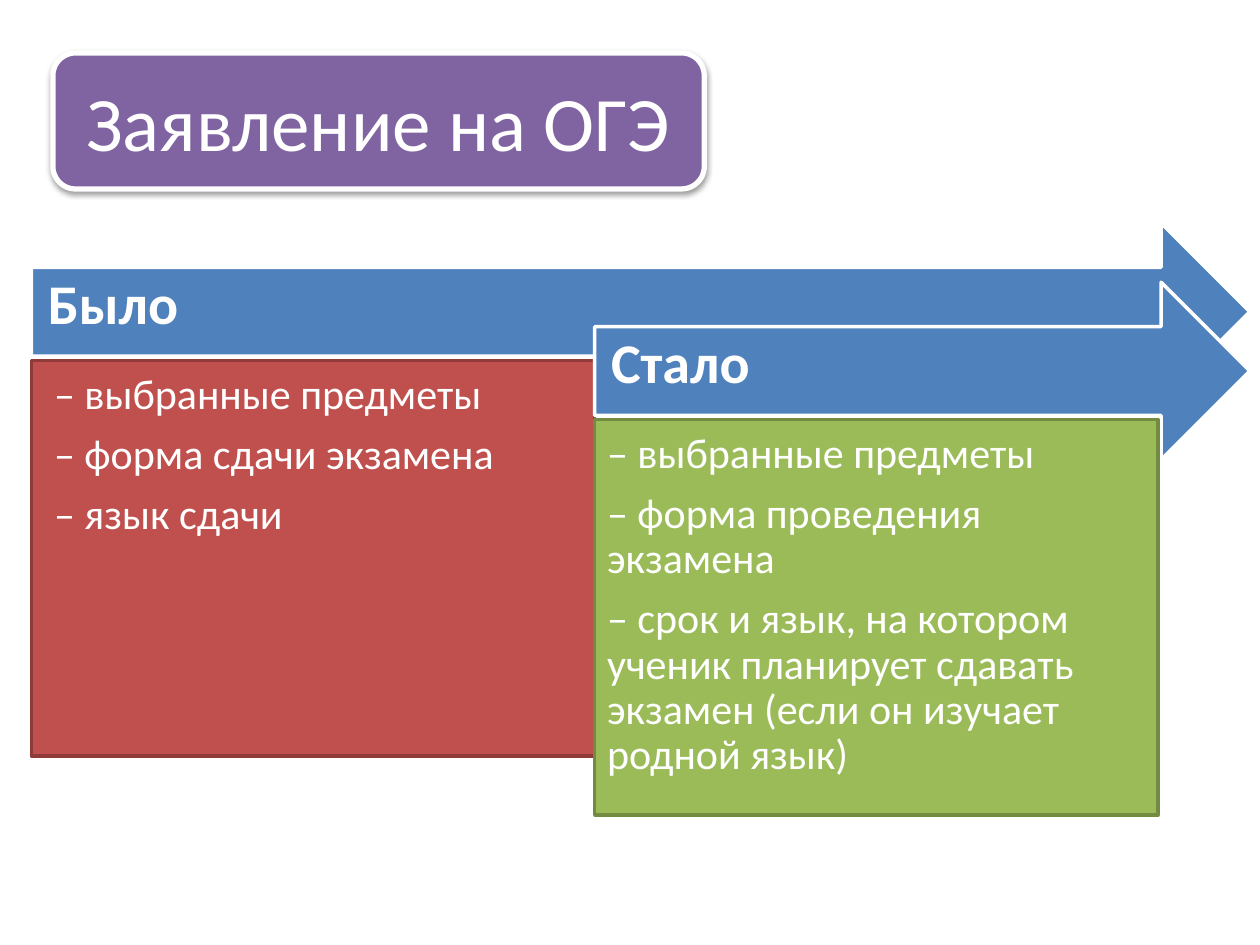
from dataclasses import dataclass

import pptx
import pptx.dml.color
import pptx.enum.shapes
import pptx.enum.text
import pptx.oxml
import pptx.oxml.ns
import pptx.util
from pptx.util import Inches, Pt

Shapes = pptx.enum.shapes.MSO_SHAPE
Anchor = pptx.enum.text.MSO_ANCHOR
Align = pptx.enum.text.PP_ALIGN

FONT = "Calibri"
WHITE = "FFFFFF"
ARROW_FILL = "4F81BD"
TITLE_FILL = "8064A2"
ARROW_RIGHT = 9.92
ARROW_HEIGHT = 1.41
PANEL_WIDTH = 4.47
PANEL_HEIGHT = 3.14
PANEL_DROP = 1.09  # from arrow top to panel top

SHADOW = (
    f'<a:effectLst {pptx.oxml.ns.nsdecls("a")}>'
    '<a:outerShdw blurRad="40000" dist="20000" dir="5400000" rotWithShape="0">'
    '<a:srgbClr val="000000"><a:alpha val="38000"/></a:srgbClr>'
    '</a:outerShdw></a:effectLst>'
)


@dataclass
class Stage:
    heading: str
    points: list[str]
    fill: str
    line: str
    text_inset: float


STAGES = [
    Stage("Было",
          ["– выбранные предметы", "– форма сдачи экзамена", "– язык сдачи"],
          "C0504D", "8E3B39", 0.18),
    Stage("Стало",
          ["– выбранные предметы", "– форма проведения экзамена",
           "– срок и язык, на котором ученик планирует сдавать экзамен "
           "(если он изучает родной язык)"],
          "9BBB59", "738A42", 0.1),
]


def color(value: str) -> pptx.dml.color.RGBColor:
    return pptx.dml.color.RGBColor.from_string(value)


def add_box(slide, kind, left: float, top: float, width: float, height: float,
            fill: str, line: str, line_width: float = 2):
    shape = slide.shapes.add_shape(
        kind, Inches(left), Inches(top), Inches(width), Inches(height))
    shape.shadow.inherit = False
    shape.fill.solid()
    shape.fill.fore_color.rgb = color(fill)
    shape.line.color.rgb = color(line)
    shape.line.width = Pt(line_width)
    return shape


def write(shape, lines: list[str], size: float, insets: tuple, anchor,
          alignment=Align.LEFT, bold: bool = False, spaced: bool = True) -> None:
    """Fill the shape with one white paragraph per line; insets go left, top, right, bottom."""
    frame = shape.text_frame
    frame.text = "\n".join(lines)
    frame.word_wrap = True
    frame.auto_size = pptx.enum.text.MSO_AUTO_SIZE.NONE
    frame.vertical_anchor = anchor
    frame.margin_left, frame.margin_top, frame.margin_right, frame.margin_bottom = (
        Inches(inset) for inset in insets)
    for paragraph in frame.paragraphs:
        paragraph.alignment = alignment
        if spaced:
            paragraph.line_spacing = 0.9
            paragraph.space_after = Pt(size * 0.35)
        for run in paragraph.runs:
            run.font.name = FONT
            run.font.size = Pt(size)
            run.font.bold = bold
            run.font.color.rgb = color(WHITE)


def add_stage(slide, stage: Stage, left: float, top: float) -> None:
    arrow = add_box(slide, Shapes.RIGHT_ARROW, left, top, ARROW_RIGHT - left,
                    ARROW_HEIGHT, ARROW_FILL, WHITE)
    write(arrow, [stage.heading], 32, (0.13, 0.13, 0.28, 0.22), Anchor.MIDDLE, bold=True)
    panel = add_box(slide, Shapes.RECTANGLE, left, top + PANEL_DROP, PANEL_WIDTH,
                    PANEL_HEIGHT, stage.fill, stage.line)
    write(panel, stage.points, 24, (stage.text_inset, 0.1, 0.1, 0.1), Anchor.TOP)


def add_title(slide, text: str) -> None:
    plate = add_box(slide, Shapes.ROUNDED_RECTANGLE, 0.42, 0.42, 5.17, 1.08,
                    TITLE_FILL, WHITE, 3)
    properties = plate._element.spPr
    properties.remove(properties.find(pptx.oxml.ns.qn("a:effectLst")))
    properties.append(pptx.oxml.parse_xml(SHADOW))

    title = slide.shapes.title
    title.left, title.top = plate.left, plate.top
    title.width, title.height = plate.width, plate.height
    write(title, [text], 44, (0.1, 0.05, 0.1, 0.05), Anchor.MIDDLE,
          Align.CENTER, spaced=False)
    plate._element.addnext(title._element)  # bring the title in front of its plate


def main() -> None:
    presentation = pptx.Presentation()
    presentation.slide_width = Inches(10)
    presentation.slide_height = Inches(7.5)
    slide = presentation.slides.add_slide(presentation.slide_layouts[5])
    for index, stage in enumerate(STAGES):
        add_stage(slide, stage, 0.25 + index * PANEL_WIDTH, 1.77 + index * 0.47)
    add_title(slide, "Заявление на ОГЭ")
    presentation.save("out.pptx")


if __name__ == "__main__":
    main()
